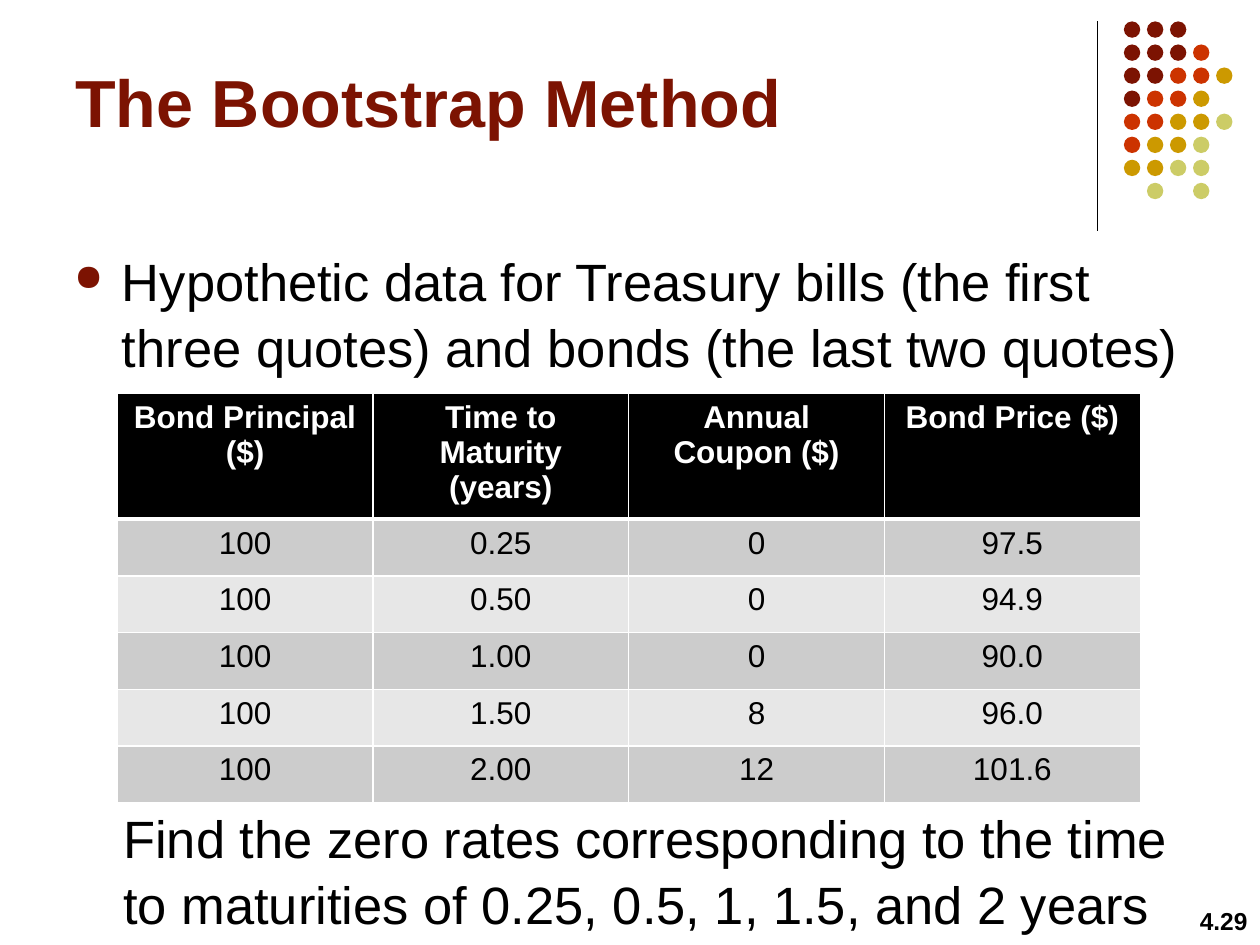
from pptx import Presentation
from pptx.dml.color import RGBColor
from pptx.enum.shapes import MSO_CONNECTOR, MSO_SHAPE
from pptx.enum.text import MSO_ANCHOR, PP_ALIGN
from pptx.oxml.ns import qn
from pptx.util import Inches, Pt
from lxml.etree import SubElement

HUES = {"red": "7C1302", "rust": "CC3300", "gold": "CC9900", "lime": "CCCC66",
        "black": "000000", "white": "FFFFFF", "dark": "CCCCCC", "light": "E7E7E7"}


def write(frame, text, size=30, hue="black", bold=False, align=PP_ALIGN.LEFT, space=None):
    frame.word_wrap = True
    para = frame.paragraphs[0]
    para.alignment = align
    para.line_spacing = space
    run = para.add_run()
    run.text = text
    font = run.font
    font.name, font.size, font.bold = "Arial", Pt(size), bold
    font.color.rgb = RGBColor.from_string(HUES[hue])
    return para


def edge(cell, side, width):
    line = SubElement(cell._tc.get_or_add_tcPr(), qn(f"a:{side}"), w=str(Pt(width)))
    fill = SubElement(line, qn("a:solidFill"))
    SubElement(fill, qn("a:srgbClr"), val=HUES["white"])


deck = Presentation()
deck.slide_width, deck.slide_height = Inches(10), Inches(7.5)
slide = deck.slides.add_slide(deck.slide_layouts[6])
shapes = slide.shapes

# Rule beside the dots
rule = shapes.add_connector(MSO_CONNECTOR.STRAIGHT, Inches(8.71), Inches(0.17),
                            Inches(8.71), Inches(1.83))
rule.line.color.rgb = RGBColor.from_string(HUES["black"])
rule.line.width = Pt(0.75)
SubElement(rule._element.spPr, qn("a:effectLst"))

# Dot pattern: one letter per dot, a point where there is none
keys = {"r": "red", "o": "rust", "g": "gold", "l": "lime"}
rows = ["rrr", "rrro", "rroog", "roog", "ooggl", "oggl", "ggll", ".l.l"]
step = 0.183
dots = shapes.add_group_shape()
for y, row in enumerate(rows):
    for x, key in enumerate(row):
        if key == ".":
            continue
        dot = dots.shapes.add_shape(MSO_SHAPE.OVAL, Inches(8.92 + x * step),
                                    Inches(0.17 + y * step), Inches(0.13), Inches(0.13))
        dot.shadow.inherit = False
        dot.fill.solid()
        dot.fill.fore_color.rgb = RGBColor.from_string(HUES[keys[key]])
        dot.line.fill.background()

# Title
title = shapes.add_textbox(Inches(0.5), Inches(0.29), Inches(8.2), Inches(1.02))
title.text_frame.vertical_anchor = MSO_ANCHOR.MIDDLE
write(title.text_frame, "The Bootstrap Method", size=38, hue="red", bold=True)

# Bulleted lead
lead = shapes.add_textbox(Inches(0.49), Inches(1.9), Inches(9), Inches(1.15))
para = write(lead.text_frame, "Hypothetic data for Treasury bills (the first three quotes) "
             "and bonds (the last two quotes)", space=1.05)
props = para._p.get_or_add_pPr()
props.set("marL", str(Inches(0.38)))
props.set("indent", str(Inches(-0.38)))
tint = SubElement(props, qn("a:buClr"))
SubElement(tint, qn("a:srgbClr"), val=HUES["red"])
SubElement(props, qn("a:buSzPct"), val="70000")
SubElement(props, qn("a:buChar"), char="●")

# Task below the table
task = shapes.add_textbox(Inches(0.88), Inches(6.32), Inches(8.61), Inches(1.1))
write(task.text_frame, "Find the zero rates corresponding to the time to maturities "
      "of 0.25, 0.5, 1, 1.5, and 2 years", space=1.05)

# Quotes table
quotes = [
    ["Bond Principal ($)", "Time to Maturity (years)", "Annual Coupon ($)", "Bond Price ($)"],
    ["100", "0.25", "0", "97.5"],
    ["100", "0.50", "0", "94.9"],
    ["100", "1.00", "0", "90.0"],
    ["100", "1.50", "8", "96.0"],
    ["100", "2.00", "12", "101.6"],
]
table = shapes.add_table(len(quotes), 4, Inches(0.93), Inches(3.12),
                         Inches(8.11), Inches(3.18)).table
for col in table.columns:
    col.width = Inches(2.03)
for y, row in enumerate(quotes):
    head = y == 0
    table.rows[y].height = Inches(0.93 if head else 0.45)
    back = "black" if head else "dark" if y % 2 else "light"
    for x, text in enumerate(row):
        cell = table.cell(y, x)
        write(cell.text_frame, text, size=18, hue="white" if head else "black",
              bold=head, align=PP_ALIGN.CENTER)
        for side in ("lnL", "lnR", "lnT", "lnB"):
            thick = (head and side == "lnB") or (y == 1 and side == "lnT")
            edge(cell, side, 3 if thick else 1)
        cell.fill.solid()
        cell.fill.fore_color.rgb = RGBColor.from_string(HUES[back])

# Slide number
page = shapes.add_textbox(Inches(9.33), Inches(7.14), Inches(0.67), Inches(0.36))
write(page.text_frame, "4.29", size=14, bold=True, align=PP_ALIGN.RIGHT)

deck.save("out.pptx")
